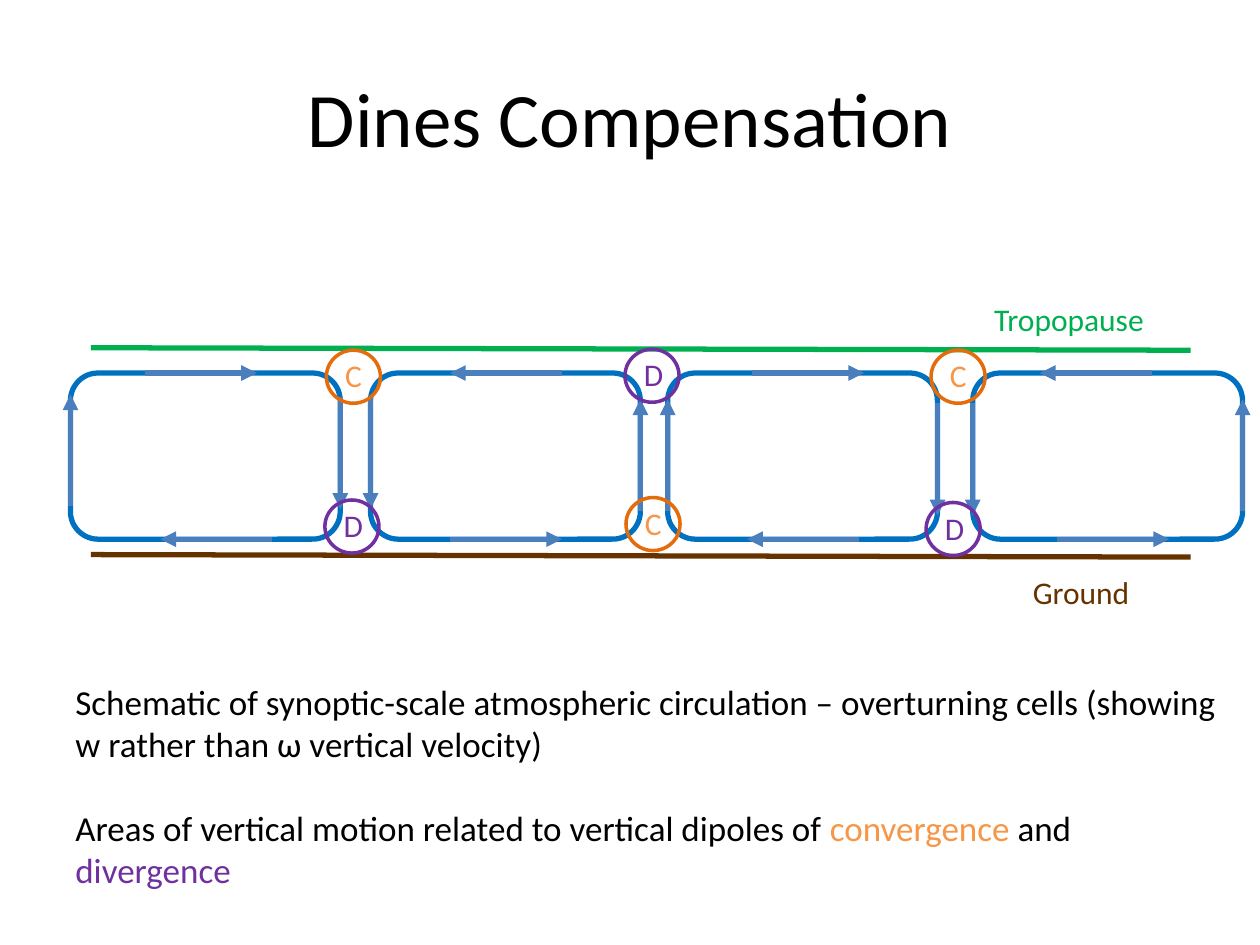
from pptx import Presentation
from pptx import util as u
from pptx.dml.color import RGBColor
from pptx.enum import shapes as es, text as et
from pptx.oxml import parse_xml
from pptx.oxml.ns import nsdecls, qn

BLACK, GREEN, BROWN = "000000", "00B050", "663300"
BLUE, STEEL = "0070C0", "4B7EBC"
# Letter: ring colour, text colour
MARKS = {"C": ("E46C0A", "F79646"), "D": ("7030A0", "7030A0")}

# Content (all lengths in cm)
TITLE = "Dines Compensation"
BOUNDS = [(7.01, GREEN), (11.18, BROWN)]
LABELS = [("Ground", 20.57, 11.43, 3.4, BROWN),
          ("Tropopause", 19.79, 5.92, 4.75, GREEN)]
# Cell left; arrow starts on the top, bottom, left and right sides
CELLS = [(1.42, 2.92, 5.49, 10.21, 8.0),
         (7.47, 11.33, 9.07, 8.0, 10.31),
         (13.46, 15.16, 17.32, 10.31, 8.13),
         (19.61, 23.22, 21.31, 8.13, 10.31)]
TOP, WIDE, HIGH, REACH = 7.52, 5.44, 3.35, 2.26
RINGS = [("C", 6.58, 7.06), ("D", 6.55, 10.08), ("C", 12.62, 10.03),
         ("C", 18.77, 7.06), ("D", 12.6, 7.04), ("D", 18.67, 10.13)]
NOTES = [
    [("Schematic of synoptic-scale atmospheric circulation – overturning "
      "cells (showing w rather than ω vertical velocity)", BLACK)],
    [("Areas of vertical motion related to vertical dipoles of ", BLACK),
     ("convergence", MARKS["C"][1]), (" and ", BLACK),
     ("divergence", MARKS["D"][1])],
]

deck = Presentation()
deck.slide_width, deck.slide_height = u.Cm(25.4), u.Cm(19.05)
page = deck.slides.add_slide(deck.slide_layouts[6]).shapes


def paint(code):
    return RGBColor.from_string(code)


def style(run, size, code):
    run.font.name, run.font.size = "Calibri", u.Pt(size)
    run.font.color.rgb = paint(code)


def frame(home, x, y, w, h):
    body = home.add_textbox(u.Cm(x), u.Cm(y), u.Cm(w), u.Cm(h)).text_frame
    body.word_wrap = True
    return body


def label(home, words, x, y, w, h, size, code):
    body = frame(home, x, y, w, h)
    body.text = words
    style(body.paragraphs[0].runs[0], size, code)
    return body


def outline(home, kind, x, y, w, h, code, width):
    shape = home.add_shape(kind, u.Cm(x), u.Cm(y), u.Cm(w), u.Cm(h))
    shape.shadow.inherit = False
    shape.fill.background()
    shape.line.color.rgb = paint(code)
    shape.line.width = u.Pt(width)


def line(x, y, dx, dy, code, arrow=False):
    item = page.add_connector(es.MSO_CONNECTOR.STRAIGHT, u.Cm(x), u.Cm(y),
                              u.Cm(x + dx), u.Cm(y + dy))
    item.line.color.rgb = paint(code)
    item.line.width = u.Pt(3)
    if arrow:
        item.line._get_or_add_ln().append(
            parse_xml(f'<a:tailEnd {nsdecls("a")} type="triangle"/>'))
    props = item._element.find(qn("p:spPr"))
    props.append(parse_xml(f'<a:effectLst {nsdecls("a")}/>'))


# Title
head = label(page, TITLE, 1.27, 0.76, 22.86, 3.18, 44, BLACK)
head.vertical_anchor = et.MSO_ANCHOR.MIDDLE
head.paragraphs[0].alignment = et.PP_ALIGN.CENTER

# Tropopause and ground
for y, code in BOUNDS:
    line(1.83, y, 22.17, 0.05, code)
for words, x, y, w, code in LABELS:
    label(page, words, x, y, w, 1.02, 18, code)

# Overturning cells
for cell in CELLS:
    outline(page, es.MSO_SHAPE.ROUNDED_RECTANGLE, cell[0], TOP, WIDE, HIGH,
            BLUE, 3)

# Flow arrows: neighbouring cells turn in opposite senses
for num, (x, top, base, left, right) in enumerate(CELLS):
    step = -REACH if num % 2 else REACH
    line(top, TOP, step, 0, STEEL, True)
    line(base, TOP + HIGH, -step, 0, STEEL, True)
    line(x, left, 0, -step, STEEL, True)
    line(x + WIDE, right, 0, step, STEEL, True)

# Explanation
body = frame(page, 1.27, 13.59, 23.77, 4.52)
for num, parts in enumerate(NOTES):
    para = body.add_paragraph() if num else body.paragraphs[0]
    para.space_before = u.Pt(24 if num else 0)
    for words, code in parts:
        run = para.add_run()
        run.text = words
        style(run, 20, code)

# Convergence and divergence rings
for mark, x, y in RINGS:
    ring, ink = MARKS[mark]
    group = page.add_group_shape().shapes
    outline(group, es.MSO_SHAPE.OVAL, x, y, 1.09, 1.07, ring, 2)
    label(group, mark, x + 0.13, y, 1.3, 1.02, 18, ink)

deck.save("out.pptx")
